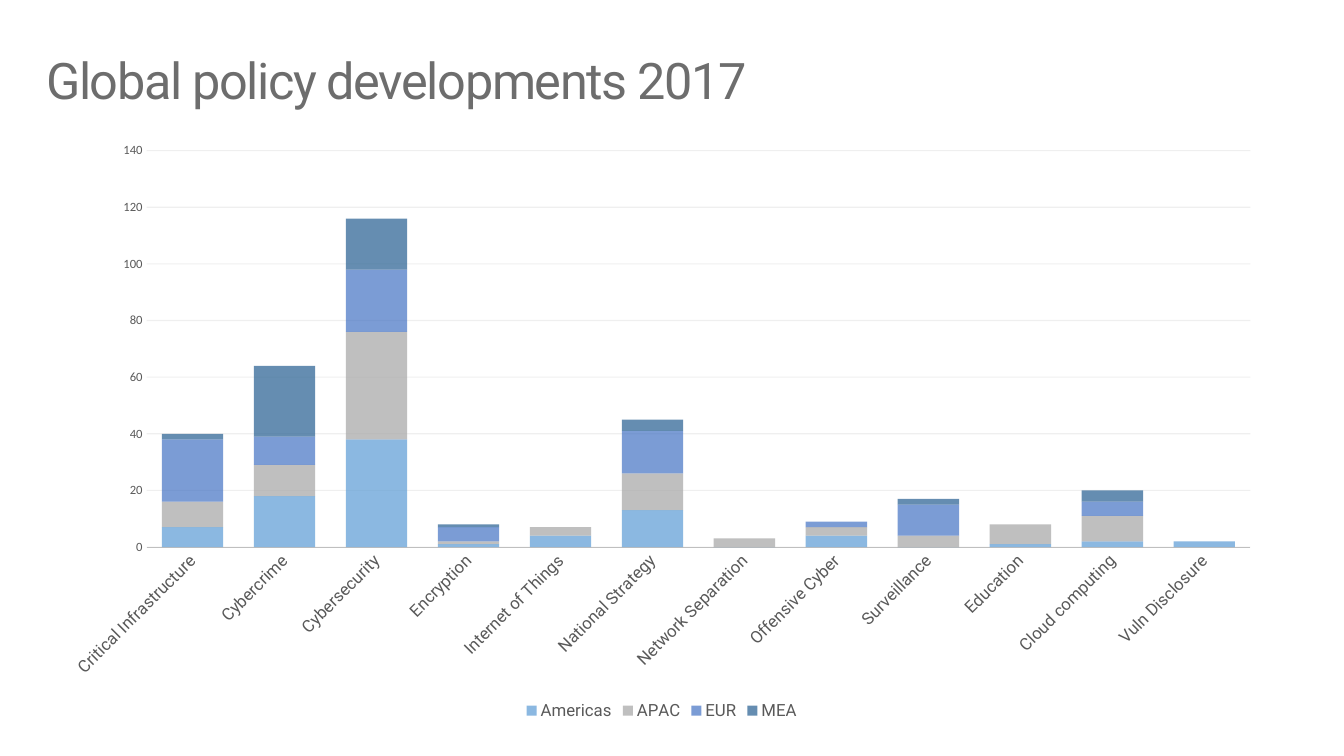
"""Build a slide with a stacked column chart of global policy developments."""
from dataclasses import dataclass

from lxml.etree import SubElement
from pptx import Presentation
from pptx.chart.data import CategoryChartData
from pptx.dml.color import RGBColor
from pptx.enum.chart import XL_CHART_TYPE as ChartType, XL_LEGEND_POSITION as LegendPos
from pptx.enum.chart import XL_TICK_MARK as Tick
from pptx.enum.text import MSO_ANCHOR as Anchor, MSO_AUTO_SIZE as AutoSize, PP_ALIGN as Align
from pptx.oxml import parse_xml
from pptx.oxml.ns import nsdecls, qn
from pptx.util import Cm, Pt


@dataclass(frozen=True)
class Theme:
    """Fonts, type sizes and colours of the slide."""
    font: str = "Roboto"
    number_font: str = "Calibri"
    title_size: int = 36
    label_size: int = 12
    number_size: int = 9
    title: str = "6D6D6D"
    label: str = "595959"
    axis: str = "BFBFBF"
    grid: str = "D9D9D9"
    series: tuple = ("5B9BD5", "A5A5A5", "4472C4", "255E91")
    series_alpha: int = 70
    grid_alpha: int = 40


THEME = Theme()
TITLE = "Global policy developments 2017"
TOPICS = [
    "Critical Infrastructure", "Cybercrime", "Cybersecurity", "Encryption",
    "Internet of Things", "National Strategy", "Network Separation", "Offensive Cyber",
    "Surveillance", "Education", "Cloud computing", "Vuln Disclosure",
]
REGIONS = {
    "Americas": (7, 18, 38, 1, 4, 13, 0, 4, 0, 1, 2, 2),
    "APAC": (9, 11, 38, 1, 3, 13, 3, 3, 4, 7, 9, 0),
    "EUR": (22, 10, 22, 5, 0, 15, 0, 2, 11, 0, 5, 0),
    "MEA": (2, 25, 18, 1, 0, 4, 0, 0, 2, 0, 4, 0),
}
PLOT_AREA = {"x": 0.08, "y": 0.03, "w": 0.9, "h": 0.67}


def apply(obj, **values):
    """Set each named attribute on an object."""
    for name, value in values.items():
        setattr(obj, name, value)


def style_font(font, name, size, color):
    """Set the face, size and colour of a font."""
    apply(font, name=name, size=Pt(size), bold=False)
    font.color.rgb = RGBColor.from_string(color)


def paint(fill, color, alpha=100):
    """Fill with a solid colour at an opacity given in percent."""
    fill.solid()
    fill.fore_color.rgb = RGBColor.from_string(color)
    if alpha < 100:
        clr = fill._xPr.find(qn("a:solidFill"))[0]
        SubElement(clr, qn("a:alpha")).set("val", str(alpha * 1000))


def add_title(s, text):
    """Place and format the title placeholder."""
    title = s.shapes.title
    apply(title, left=Cm(0.91), top=Cm(0.86), width=Cm(25.73), height=Cm(2.49))
    tf = title.text_frame
    apply(tf, auto_size=AutoSize.NONE, vertical_anchor=Anchor.MIDDLE, word_wrap=True)
    p = tf.paragraphs[0]
    apply(p, alignment=Align.LEFT, line_spacing=0.9)
    r = p.add_run()
    r.text = text
    style_font(r.font, THEME.font, THEME.title_size, THEME.title)
    r.font._element.set("spc", "-100")


def set_plot_area(chart, area):
    """Fix the inner plot area as fractions of the chart frame."""
    plot_area = chart._chartSpace.chart.plotArea
    for old in plot_area.findall(qn("c:layout")):
        plot_area.remove(old)
    modes = "".join(f'<c:{k}Mode val="edge"/>' for k in "xy")
    sizes = "".join(f'<c:{k} val="{v}"/>' for k, v in area.items())
    plot_area.insert(0, parse_xml(
        f'<c:layout {nsdecls("c")}><c:manualLayout><c:layoutTarget val="inner"/>'
        f'{modes}{sizes}</c:manualLayout></c:layout>'))


def style_axes(chart):
    """Format the slanted category axis and the gridded value axis."""
    cat, val = chart.category_axis, chart.value_axis
    for axis in (cat, val):
        apply(axis, major_tick_mark=Tick.NONE, minor_tick_mark=Tick.NONE)
    style_font(cat.tick_labels.font, THEME.font, THEME.label_size, THEME.label)
    cat._element.txPr.bodyPr.set("rot", "-2700000")
    cat.format.line.width = Pt(0.75)
    paint(cat.format.line.fill, THEME.axis)
    style_font(val.tick_labels.font, THEME.number_font, THEME.number_size, THEME.label)
    apply(val, minimum_scale=0, maximum_scale=140, major_unit=20, has_major_gridlines=True)
    val.format.line.fill.background()
    grid = val.major_gridlines.format.line
    grid.width = Pt(0.75)
    paint(grid.fill, THEME.grid, THEME.grid_alpha)


def add_stacked_chart(s, categories, regions):
    """Add the stacked column chart with its legend."""
    data = CategoryChartData()
    data.categories = categories
    for name, values in regions.items():
        data.add_series(name, values)
    chart = s.shapes.add_chart(ChartType.COLUMN_STACKED, Cm(1.22), Cm(3.35),
                               Cm(30.91), Cm(14.91), data).chart
    apply(chart, has_title=False, has_legend=True)
    apply(chart.font, name=THEME.number_font, size=Pt(10))
    apply(chart.legend, position=LegendPos.BOTTOM, include_in_layout=False)
    style_font(chart.legend.font, THEME.font, THEME.label_size, THEME.label)
    plot = chart.plots[0]
    apply(plot, gap_width=50, overlap=100, vary_by_categories=False)
    for series, color in zip(plot.series, THEME.series):
        paint(series.format.fill, color, THEME.series_alpha)
    style_axes(chart)
    set_plot_area(chart, PLOT_AREA)


def main():
    """Build and save the slide."""
    prs = Presentation()
    apply(prs, slide_width=Cm(33.87), slide_height=Cm(19.05))
    s = prs.slides.add_slide(prs.slide_layouts.get_by_name("Title Only"))
    add_title(s, TITLE)
    add_stacked_chart(s, TOPICS, REGIONS)
    prs.save("out.pptx")


if __name__ == "__main__":
    main()
